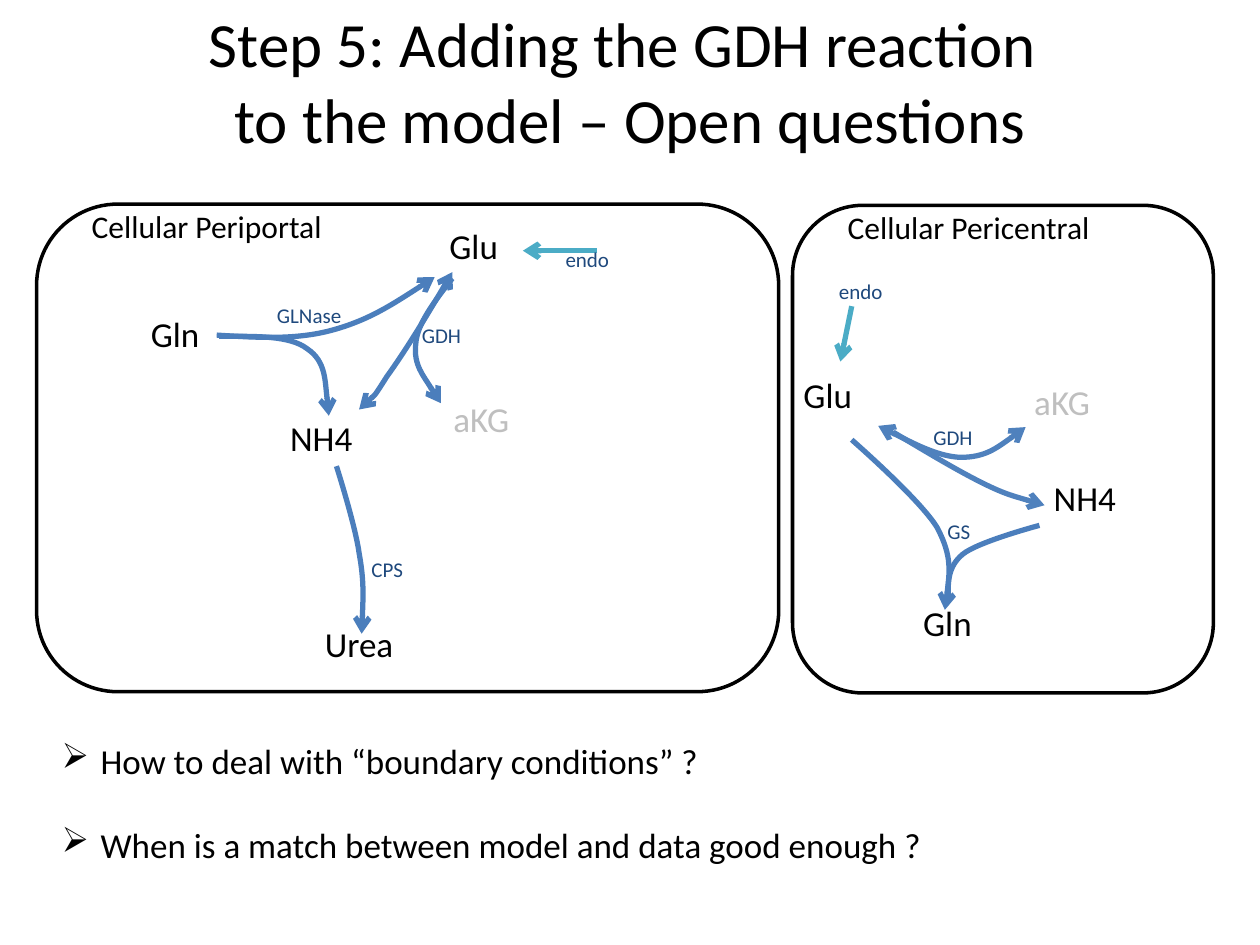
import pptx
import pptx.util
import pptx.dml.color
import pptx.enum.shapes
import pptx.enum.text
import pptx.oxml.ns
import lxml.etree

Inches = pptx.util.Inches
Pt = pptx.util.Pt
ALIGN = pptx.enum.text.PP_ALIGN
ANCHOR = pptx.enum.text.MSO_ANCHOR
BLACK, GREY, NAVY = "000000", "BFBFBF", "1F497D"
BLUE, SKY, TEAL = "4B7EBC", "4F81BD", "4BACC6"


def color(text):
    return pptx.dml.color.RGBColor.from_string(text)


def child(parent, tag, **attrs):
    return lxml.etree.SubElement(parent, pptx.oxml.ns.qn(tag), **attrs)


def add_text(slide, text, x, y, w, h, size=20, ink=BLACK,
             align=ALIGN.LEFT, anchor=ANCHOR.TOP):
    box = slide.shapes.add_textbox(x, y, w, h)
    frame = box.text_frame
    frame.word_wrap = True
    frame.vertical_anchor = anchor
    frame.text = text
    for para in frame.paragraphs:
        para.alignment = align
        para.font.size = Pt(size)
        para.font.name = "Calibri"
        para.font.color.rgb = color(ink)
    return frame


def style_line(shape, ink, ends):
    """Set a 3 pt line with open arrows at the named ends."""
    shape.line.color.rgb = color(ink)
    shape.line.width = Pt(3)
    ln = shape.line._get_or_add_ln()
    for end in ends:
        child(ln, f"a:{end}End", type="arrow")


def add_curve(slide, x, y, points, ink=BLUE, ends=("tail",)):
    """Draw Bezier arcs: a start point, then three points for each arc."""
    points = [(Inches(px), Inches(py)) for px, py in points]
    form = slide.shapes.build_freeform(*points[0])
    form.add_line_segments(points[1:], close=False)
    shape = form.convert_to_shape(x, y)
    shape.shadow.inherit = False
    shape.fill.background()
    style_line(shape, ink, ends)
    steps = shape._element.xpath(".//a:lnTo")
    for i in range(0, len(steps), 3):
        arc = lxml.etree.Element(pptx.oxml.ns.qn("a:cubicBezTo"))
        steps[i].addprevious(arc)
        for step in steps[i:i + 3]:
            arc.append(step[0])
            step.getparent().remove(step)


def add_arrow(slide, x, y, start, end):
    (ax, ay), (bx, by) = start, end
    arrow = slide.shapes.add_connector(
        pptx.enum.shapes.MSO_CONNECTOR.STRAIGHT,
        x + Inches(ax), y + Inches(ay), x + Inches(bx), y + Inches(by))
    style_line(arrow, TEAL, ["tail"])
    child(arrow._element.spPr, "a:effectLst")


def add_cell(slide, x, y, w, h, name, nodes, curves, labels, inflow):
    """Draw one cell; all parts are placed from its top left corner."""
    frame = slide.shapes.add_shape(
        pptx.enum.shapes.MSO_SHAPE.ROUNDED_RECTANGLE, x, y, w, h)
    frame.shadow.inherit = False
    frame.fill.solid()
    frame.fill.fore_color.rgb = color("FFFFFF")
    frame.line.color.rgb = color(BLACK)
    frame.line.width = Pt(2)
    add_text(slide, name, x + Inches(0.34), y - Inches(0.03),
             Inches(2.97), Inches(0.4), size=18)
    for text, nx, ny in nodes:
        add_text(slide, text, x + Inches(nx), y + Inches(ny),
                 Inches(0.9), Inches(0.44), align=ALIGN.CENTER,
                 anchor=ANCHOR.MIDDLE, ink=GREY if text == "aKG" else BLACK)
    for points, style in curves:
        add_curve(slide, x, y, points, **style)
    add_arrow(slide, x, y, *inflow)
    for text, lx, ly in labels:
        add_text(slide, text, x + Inches(lx), y + Inches(ly),
                 Inches(0.9), Inches(0.3), size=12, ink=NAVY)


def add_portal(slide, x, y, w, h):
    both = {"ends": ("head", "tail")}
    add_cell(
        slide, x, y, w, h, "Cellular Periportal",
        nodes=[("Glu", 3.02, 0.11), ("aKG", 3.08, 1.48), ("Urea", 2.11, 3.27),
               ("Gln", 0.65, 0.81), ("NH4", 1.81, 1.63)],
        curves=[
            ([(1.43, 1.04), (1.75, 1.06), (2.06, 1.08), (2.35, 1.0),
              (2.64, 0.92), (2.9, 0.75), (3.16, 0.58)], {}),
            ([(1.45, 1.05), (1.73, 1.05), (2.01, 1.04), (2.15, 1.15),
              (2.3, 1.25), (2.32, 1.68), (2.32, 1.68)], {}),
            ([(3.3, 0.59), (3.16, 0.77), (3.02, 0.95), (3.01, 1.11),
              (2.99, 1.28), (3.21, 1.58), (3.21, 1.58)], {}),
            ([(3.3, 0.54), (3.11, 0.87), (2.91, 1.19), (2.78, 1.37),
              (2.66, 1.56), (2.61, 1.59), (2.56, 1.63)], both),
            ([(2.38, 2.08), (2.38, 2.08), (2.53, 2.55), (2.56, 2.77),
              (2.6, 2.99), (2.59, 3.2), (2.58, 3.41)], {})],
        labels=[("GLNase", 1.81, 0.73), ("GDH", 2.96, 0.89),
                ("CPS", 2.56, 2.75), ("endo", 4.1, 0.29)],
        inflow=((4.45, 0.37), (3.86, 0.37)))


def add_central(slide, x, y, w, h):
    add_cell(
        slide, x, y, w, h, "Cellular Pericentral",
        nodes=[("Glu", -0.17, 1.28), ("aKG", 1.69, 1.34),
               ("Gln", 0.78, 3.09), ("NH4", 1.87, 2.1)],
        curves=[
            ([(1.85, 1.76), (1.69, 1.88), (1.53, 2.0), (1.33, 2.0),
              (1.14, 1.99), (0.68, 1.75), (0.68, 1.75)],
             {"ink": SKY, "ends": ("head", "tail")}),
            ([(0.8, 1.8), (1.05, 1.95), (1.3, 2.1), (1.5, 2.2),
              (1.7, 2.3), (2.0, 2.38), (2.0, 2.38)], {"ink": SKY}),
            ([(0.47, 1.86), (0.47, 1.86), (1.02, 2.34), (1.15, 2.56),
              (1.27, 2.79), (1.24, 3.0), (1.21, 3.21)], {}),
            ([(1.24, 3.14), (1.23, 3.0), (1.23, 2.87), (1.35, 2.77),
              (1.47, 2.67), (1.96, 2.54), (1.96, 2.54)], {"ends": ()})],
        labels=[("GDH", 1.02, 1.69), ("GS", 1.13, 2.44), ("endo", 0.27, 0.53)],
        inflow=((0.47, 0.8), (0.38, 1.24)))


def add_asks(slide, x, y, w, h):
    asks = ["How to deal with “boundary conditions” ?",
            "When is a match between model and data good enough ?"]
    frame = add_text(slide, "\n".join(asks), x, y, w, h)
    frame.paragraphs[1].space_before = Pt(24)
    for para in frame.paragraphs:
        props = para._p.get_or_add_pPr()
        props.set("marL", str(Inches(0.31)))
        props.set("indent", str(-Inches(0.31)))
        mark = lxml.etree.Element(pptx.oxml.ns.qn("a:buChar"), char="➢")
        props.find(pptx.oxml.ns.qn("a:defRPr")).addprevious(mark)
        for run in para.runs:
            run.font.size = Pt(20)


def main():
    deck = pptx.Presentation()
    deck.slide_width, deck.slide_height = Inches(10), Inches(7.5)
    slide = deck.slides.add_slide(deck.slide_layouts[6])
    add_text(slide, "Step 5: Adding the GDH reaction \vto the model – Open questions",
             Inches(0.5), Inches(0.01), Inches(9), Inches(1.25), size=36,
             align=ALIGN.CENTER, anchor=ANCHOR.MIDDLE)
    add_portal(slide, Inches(0.29), Inches(1.62), Inches(5.89), Inches(3.87))
    add_central(slide, Inches(6.29), Inches(1.63), Inches(3.34), Inches(3.87))
    add_asks(slide, Inches(0.39), Inches(5.82), Inches(8.88), Inches(1.11))
    deck.save("out.pptx")


if __name__ == "__main__":
    main()
